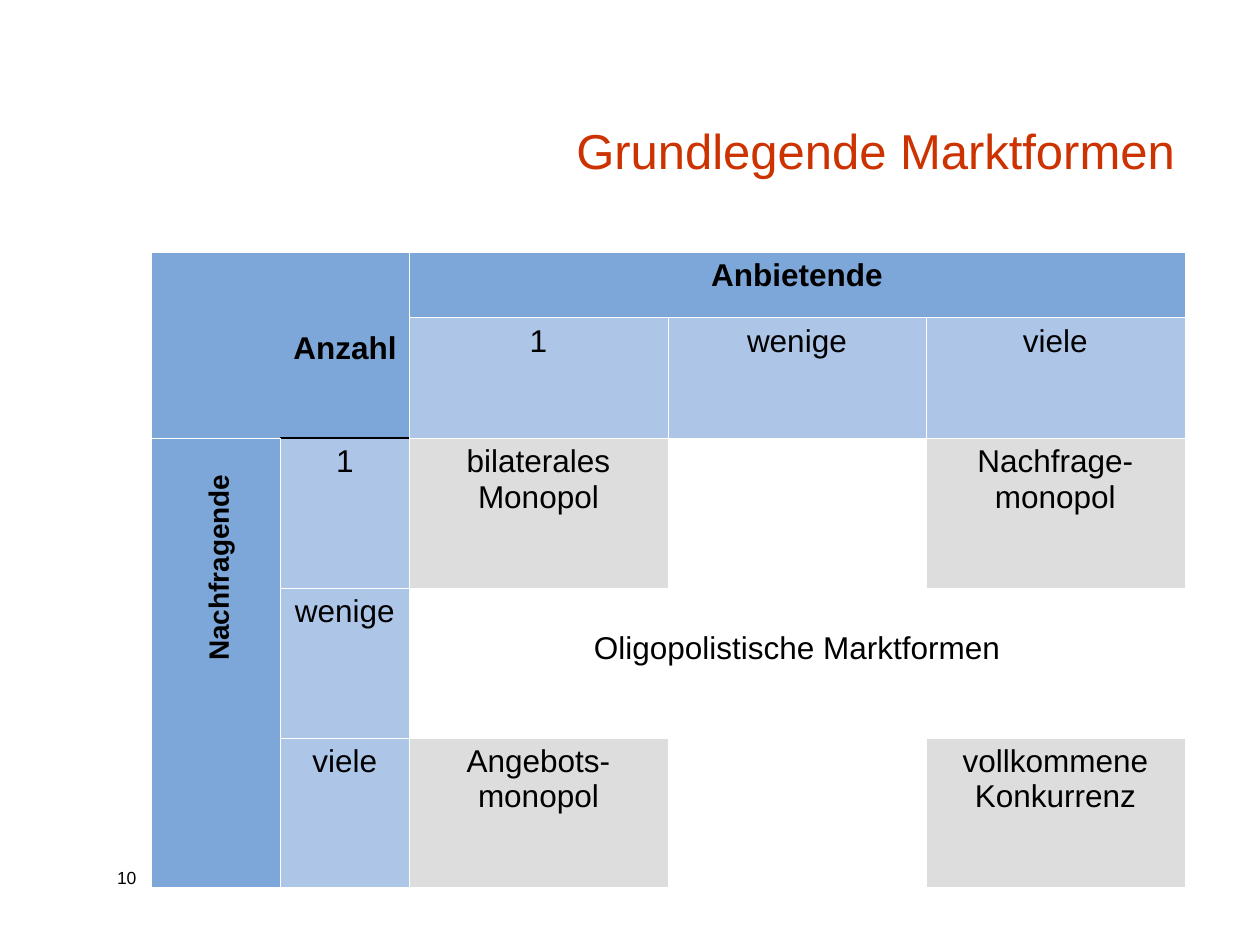
from lxml import etree
from pptx import Presentation
from pptx.dml.color import RGBColor
from pptx.enum.text import MSO_ANCHOR, PP_ALIGN
from pptx.oxml.ns import qn
from pptx.util import Cm, Pt

LEFT, CENTER, RIGHT = PP_ALIGN.LEFT, PP_ALIGN.CENTER, PP_ALIGN.RIGHT
TOP, BOTTOM = MSO_ANCHOR.TOP, MSO_ANCHOR.BOTTOM
BLACK = RGBColor(0x00, 0x00, 0x00)
WHITE = RGBColor(0xFF, 0xFF, 0xFF)
RED = RGBColor(0xCC, 0x33, 0x00)
BLUE = RGBColor(0x7D, 0xA7, 0xD8)
LIGHT_BLUE = RGBColor(0xAD, 0xC5, 0xE7)
GREY = RGBColor(0xDD, 0xDD, 0xDD)


def write(tf, lines, size, color=BLACK, bold=False, align=CENTER):
    for i, line in enumerate(lines):
        p = tf.paragraphs[0] if i == 0 else tf.add_paragraph()
        p.text = line
        p.alignment = align
        p.font.name = "Arial"
        p.font.size = Pt(size)
        p.font.bold = bold
        p.font.color.rgb = color


def border(cell, side, color, width):
    ln = etree.SubElement(cell._tc.get_or_add_tcPr(), qn(f"a:ln{side}"), w=str(Pt(width)))
    fill = etree.SubElement(ln, qn("a:solidFill"))
    etree.SubElement(fill, qn("a:srgbClr"), val=str(color))


prs = Presentation()
prs.slide_width, prs.slide_height = Cm(25.4), Cm(19.05)
s = prs.slides.add_slide(prs.slide_layouts[6])

# Table grid
widths = [2.6] * 2 + [5.21] * 3
heights = [1.32, 2.38] + [3.02] * 3
table = s.shapes.add_table(5, 5, Cm(3.05), Cm(5.08), Cm(sum(widths)), Cm(sum(heights))).table
table.first_row = table.horz_banding = False
for column, width in zip(table.columns, widths):
    column.width = Cm(width)
for row, height in zip(table.rows, heights):
    row.height = Cm(height)

# Borders and fills: heading bands, counts, market forms
market_forms = {
    (2, 2): ["bilaterales", "Monopol"],
    (2, 4): ["Nachfrage-", "monopol"],
    (4, 2): ["Angebots-", "monopol"],
    (4, 4): ["vollkommene", "Konkurrenz"],
}
for r in range(5):
    for c in range(5):
        cell = table.cell(r, c)
        for side in "LRTB":
            # A black line separates "Anzahl" from the counts below
            if (r, c, side) in ((1, 1, "B"), (2, 1, "T")):
                border(cell, side, BLACK, 1)
            else:
                border(cell, side, WHITE, 0.06)
        if r == 0 or c == 0 or (r, c) == (1, 1):
            color = BLUE
        elif r == 1 or c == 1:
            color = LIGHT_BLUE
        else:
            color = GREY if (r, c) in market_forms else WHITE
        cell.fill.solid()
        cell.fill.fore_color.rgb = color

# Merged cells
for first, last in (((0, 0), (1, 1)), ((0, 2), (0, 4)), ((2, 0), (4, 0)), ((3, 2), (3, 4))):
    table.cell(*first).merge(table.cell(*last))

# Table texts
corner = table.cell(0, 0)
corner.margin_top = Cm(1.59)
write(corner.text_frame, ["Anzahl"], 18, bold=True, align=RIGHT)
write(table.cell(0, 2).text_frame, ["Anbietende"], 18, bold=True)
for i, count in enumerate(["1", "wenige", "viele"]):
    for cell in (table.cell(1, 2 + i), table.cell(2 + i, 1)):
        write(cell.text_frame, [count], 18)
for position, lines in market_forms.items():
    write(table.cell(*position).text_frame, lines, 18)
oligopoly = table.cell(3, 2)
oligopoly.margin_top = Cm(0.86)
write(oligopoly.text_frame, ["Oligopolistische Marktformen"], 18)

# Title, row heading and slide number
for text, box, size, color, bold, align, anchor, rotation in (
    ("Grundlegende Marktformen", (5.31, 1.07, 18.62, 2.67), 28, RED, False, RIGHT, BOTTOM, 0),
    ("Nachfragende", (1.73, 11, 5.28, 0.89), 16, BLACK, True, CENTER, TOP, 270),
    ("10", (2.11, 17.35, 1.7, 0.69), 10, BLACK, False, LEFT, TOP, 0),
):
    sp = s.shapes.add_textbox(*map(Cm, box))
    sp.rotation = rotation
    tf = sp.text_frame
    tf.word_wrap = True
    tf.vertical_anchor = anchor
    write(tf, [text], size, color, bold, align)

prs.save("out.pptx")
